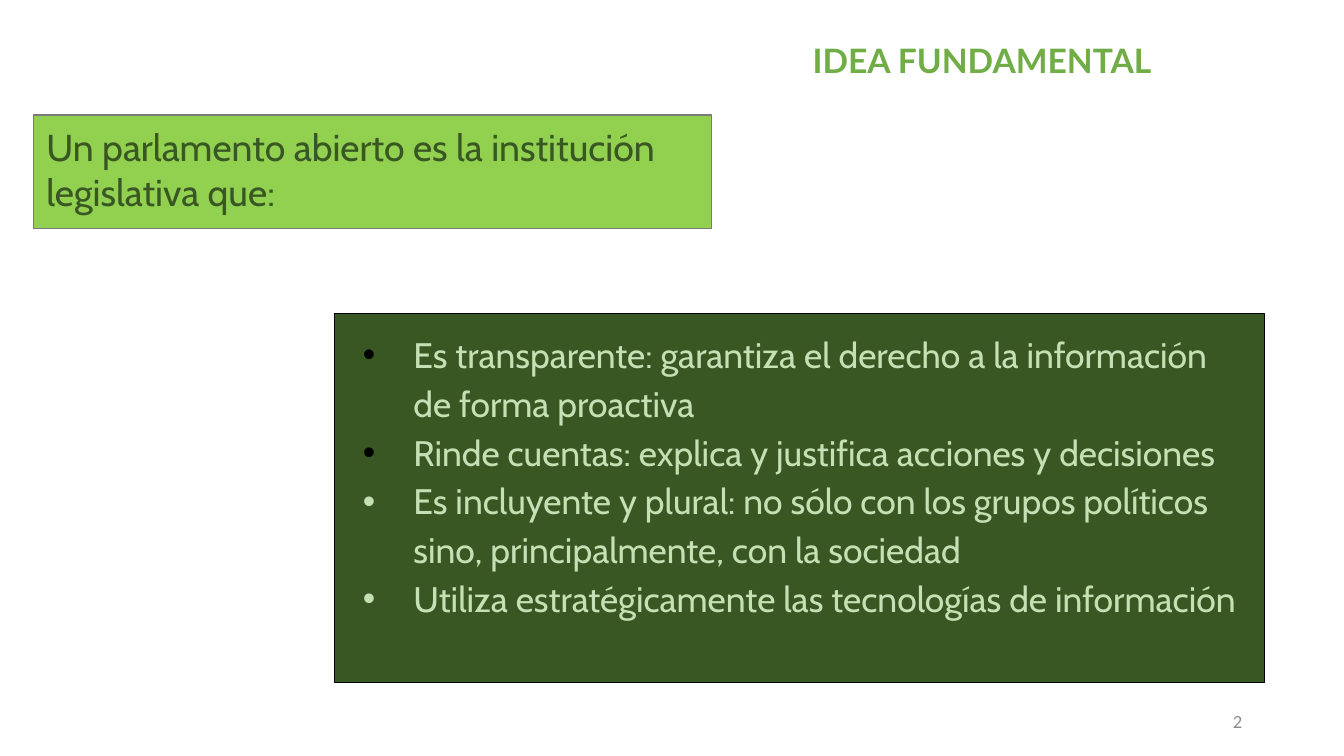
from pptx import Presentation
from pptx import util as u
from pptx.dml.color import RGBColor
from pptx.enum import shapes, text
from pptx.oxml.ns import qn
from lxml import etree

# Content
TITLE = "IDEA FUNDAMENTAL"
INTRO = "Un parlamento abierto es la institución legislativa que:"
PAGE_NUMBER = "2"
# (text, bullet colour)
PRINCIPLES = [
    ("Es transparente: garantiza el derecho a la información de forma proactiva", "000000"),
    ("Rinde cuentas: explica y justifica acciones y decisiones", "000000"),
    ("Es incluyente y plural: no sólo con los grupos políticos sino, "
     "principalmente, con la sociedad", "C5E0B4"),
    ("Utiliza estratégicamente las tecnologías de información", "C5E0B4"),
]

# Layout in px, 100 px to the inch: left, top, width, height
SCALE = 9144
SLIDE_SIZE = (1333, 750)
INTRO_BAND = (33, 114, 673, 113)
INTRO_TEXT = (33, 133, 643, 70)
PRINCIPLES_PANEL = (332, 311, 922, 366)
TITLE_TEXT = (793, 27, 599, 51)
NUMBER_TEXT = (942, 695, 300, 40)
INSET, BULLET_INDENT, BULLET_HANG = 13, 65, 50

# Formats
TITLE_FONT = {"name": "Lato", "size": 24, "color": "70AD47", "bold": True}
INTRO_FONT = {"name": "Cabin", "size": 26.7, "color": "385723"}
PRINCIPLE_FONT = {"name": "Cabin", "size": 25.3, "color": "C5E0B4"}
NUMBER_FONT = {"name": "Calibri", "size": 13.3, "color": "8C8C8C"}


def px(length):
    return u.Emu(length * SCALE)


def rgb(value):
    return RGBColor.from_string(value)


def add_box(slide, place, fill, line):
    shape = slide.shapes.add_shape(shapes.MSO_SHAPE.RECTANGLE, *map(px, place))
    shape.shadow.inherit = False
    shape.fill.solid()
    shape.fill.fore_color.rgb = rgb(fill)
    shape.line.color.rgb = rgb(line)
    shape.line.width = u.Pt(1)
    return shape


def prepare_frame(shape, anchor, inset=INSET):
    frame = shape.text_frame
    margins = {f"margin_{side}": px(inset) for side in ("left", "top", "right", "bottom")}
    for name, value in {**margins, "word_wrap": True, "vertical_anchor": anchor}.items():
        setattr(frame, name, value)
    return frame


def write(paragraph, content, font_format, align=text.PP_ALIGN.LEFT):
    paragraph.alignment = align
    run = paragraph.add_run()
    run.text = content
    for name, value in font_format.items():
        if name == "color":
            run.font.color.rgb = rgb(value)
        else:
            setattr(run.font, name, u.Pt(value) if name == "size" else value)


def add_bullet(paragraph, color):
    properties = paragraph._p.get_or_add_pPr()
    properties.set("marL", str(px(BULLET_INDENT)))
    properties.set("indent", str(-px(BULLET_HANG)))
    bullet_color = etree.SubElement(properties, qn("a:buClr"))
    etree.SubElement(bullet_color, qn("a:srgbClr"), val=color)
    etree.SubElement(properties, qn("a:buFont"), typeface="Arial")
    etree.SubElement(properties, qn("a:buChar"), char="•")


def main():
    presentation = Presentation()
    presentation.slide_width, presentation.slide_height = map(px, SLIDE_SIZE)
    slide = presentation.slides.add_slide(presentation.slide_layouts[6])
    top, middle = text.MSO_ANCHOR.TOP, text.MSO_ANCHOR.MIDDLE

    # Introduction band
    add_box(slide, INTRO_BAND, "92D050", "7A7A7A")

    # Panel of principles
    panel = add_box(slide, PRINCIPLES_PANEL, "385723", "000000")
    frame = prepare_frame(panel, top)
    for index, (principle, bullet_color) in enumerate(PRINCIPLES):
        paragraph = frame.add_paragraph() if index else frame.paragraphs[0]
        write(paragraph, principle, PRINCIPLE_FONT)
        paragraph.line_spacing = 1.15
        add_bullet(paragraph, bullet_color)

    # Title, page number and introduction
    left, right = text.PP_ALIGN.LEFT, text.PP_ALIGN.RIGHT
    for place, content, font_format, anchor, align, inset in (
        (TITLE_TEXT, TITLE, TITLE_FONT, top, left, INSET),
        (NUMBER_TEXT, PAGE_NUMBER, NUMBER_FONT, middle, right, 10),
        (INTRO_TEXT, INTRO, INTRO_FONT, middle, left, INSET),
    ):
        box = slide.shapes.add_textbox(*map(px, place))
        frame = prepare_frame(box, anchor, inset)
        write(frame.paragraphs[0], content, font_format, align)

    presentation.save("out.pptx")


if __name__ == "__main__":
    main()
